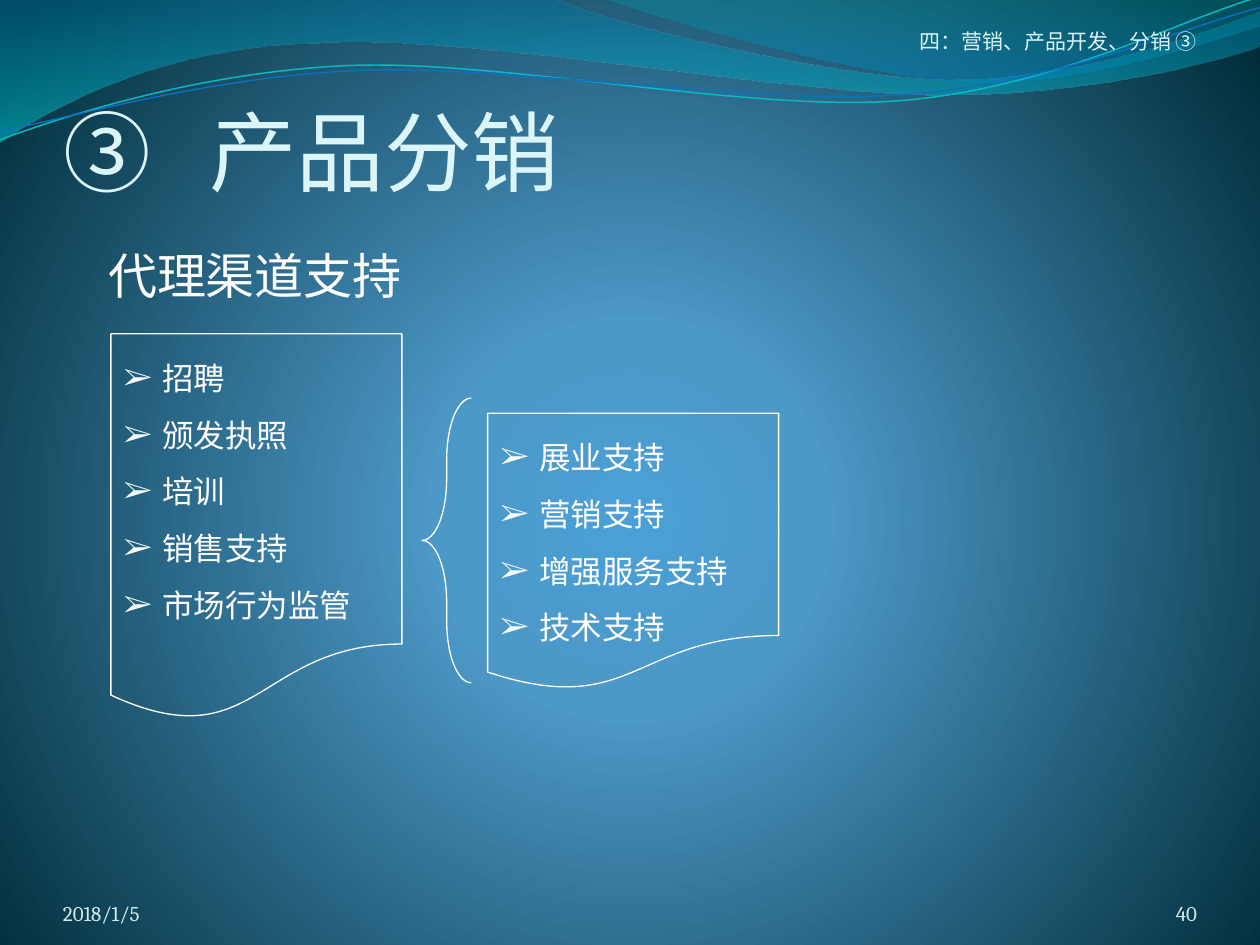
from math import cos, radians, sin
from pptx import Presentation
from pptx.dml.color import RGBColor
from pptx.enum.shapes import MSO_SHAPE as Preset
from pptx.enum.text import MSO_ANCHOR as Anchor, PP_ALIGN as Align
from pptx.oxml import parse_xml
from pptx.oxml.ns import qn
from pptx.util import Emu, Inches, Pt
from lxml.etree import SubElement

COLUMNS, ROWS = 100, 75
CELL = Inches(0.1)
TILT = 2.7
NAMESPACE = "http://schemas.openxmlformats.org/drawingml/2006/main"
COLOURS = {
    "white": "FFFFFF", "pale": "DBF5F9", "footer": "D1EAEE",
    "glow": "4AA0D6", "sky": "4C98C7", "night": "002C38",
    "blue": "0074A1", "cyan": "00C6CF", "teal": "00A1A9", "azure": "008BBF",
    "turquoise_line": "0AB8BF", "blue_line": "0F6FC6",
}
WIDE_WAVE = [
    [(0, 0)], [(44, -0.1)], [(47.6, 1.7), (66.4, 6.3), (75.8, 6.3)],
    [(85.3, 6.3), (95.8, 2.6), (100, 0.9)], [(100.1, 3.6)],
    [(98.3, 4.4), (87, 7.6), (74.6, 7.5)], [(62.2, 7.5), (38.2, 2.8), (25.7, 3.4)],
    [(12.9, 3.6), (4.6, 8.3), (-0.1, 11.3)], [(0, 0)],
]
CORNER_WAVE = [
    [(47.9, -0.1)], [(50.9, 1.1), (68.2, 6.2), (76.9, 6.5)],
    [(85.6, 6.9), (96.1, 3.2), (100, 2.1)], [(100, 0)], [(47.9, -0.1)],
]
UPPER_LINE = [
    [(0, 11.1)], [(4.8, 9.3), (15.8, 5.7), (27.7, 5.2)],
    [(39.5, 4.7), (59.3, 8.9), (71.3, 8)], [(83.3, 7.1), (93.8, 1.5), (99.8, -0.2)],
]
LOWER_LINE = [
    [(0, 10.4)], [(4.7, 9.6), (16.4, 6.1), (28.3, 5.6)],
    [(40.3, 5.1), (59.7, 8.4), (71.7, 7.5)], [(83.6, 6.7), (94.1, 2.1), (100, 0.6)],
]


def grid(*cells):
    """Turn grid columns and rows into lengths."""
    return [Emu(round(cell * CELL)) for cell in cells]


def rgb(name):
    """Look up a named colour."""
    return RGBColor.from_string(COLOURS[name])


def gradient(stops, direction):
    """Build a gradient fill from (position, colour, opacity) stops."""
    marks = "".join(
        f'<a:gs pos="{position * 1000}"><a:srgbClr val="{COLOURS[name]}">'
        f'<a:alpha val="{opacity * 1000}"/></a:srgbClr></a:gs>'
        for position, name, opacity in stops)
    return f'<a:gradFill xmlns:a="{NAMESPACE}" rotWithShape="1"><a:gsLst>{marks}</a:gsLst>{direction}</a:gradFill>'


def paint_background(slide):
    """Give the slide its round glow."""
    slide.background.fill.solid()
    properties = slide.background._cSld.bg.bgPr
    stops = [(0, "glow", 100), (25, "sky", 100), (100, "night", 100)]
    direction = '<a:path path="circle"><a:fillToRect l="10000" t="110000" r="10000" b="100000"/></a:path>'
    properties.replace(properties[0], parse_xml(gradient(stops, direction)))


def turn(point, pivot):
    """Turn a point clockwise about a pivot by the tilt."""
    angle = radians(TILT)
    across, down = point[0] - pivot[0], point[1] - pivot[1]
    return (pivot[0] + across * cos(angle) - down * sin(angle),
            pivot[1] + across * sin(angle) + down * cos(angle))


def add_curve(slide, segments, close):
    """Draw a freeform of straight and cubic segments without shadow, fill or line."""
    points = [tuple(grid(*point)) for segment in segments for point in segment]
    builder = slide.shapes.build_freeform(*points[0])
    builder.add_line_segments(points[1:], close=close)
    shape = builder.convert_to_shape()
    steps = iter(shape._element.findall(f".//{qn('a:lnTo')}"))
    for segment in segments[1:]:
        corners = [next(steps) for _ in segment]
        if len(corners) == 3:
            cubic = parse_xml(f'<a:cubicBezTo xmlns:a="{NAMESPACE}"/>')
            corners[0].addprevious(cubic)
            for corner in corners:
                cubic.append(corner[0])
                corner.getparent().remove(corner)
    shape.shadow.inherit = False
    shape.fill.background()
    shape.line.fill.background()
    return shape


def add_wave(slide, segments, stops):
    """Draw a translucent wave with a downward gradient."""
    properties = add_curve(slide, segments, True)._element.spPr
    fill = parse_xml(gradient(stops, '<a:lin ang="5400000" scaled="1"/>'))
    properties.replace(properties.find(qn("a:noFill")), fill)


def set_line(shape, colour, width):
    """Outline a shape."""
    shape.line.color.rgb = rgb(colour)
    shape.line.width = Pt(width)


def add_tilted_line(slide, segments, pivot, colour, width):
    """Draw an open curve as a level shape that is then tilted."""
    level = [[turn(point, pivot) for point in segment] for segment in segments]
    shape = add_curve(slide, level, False)
    shape.rotation = 360 - TILT
    set_line(shape, colour, width)


def add_run(paragraph, text, size, font, colour):
    """Add one formatted run."""
    run = paragraph.add_run()
    run.text = text
    run.font.size = Pt(size)
    run.font.name = font
    run.font.color.rgb = rgb(colour)


def add_label(slide, cells, text, size, font, colour, align=Align.LEFT, top_inset=0.0):
    """Add a one-paragraph text box standing on its lower edge."""
    frame = slide.shapes.add_textbox(*grid(*cells)).text_frame
    frame.word_wrap = True
    frame.vertical_anchor = Anchor.BOTTOM
    frame.margin_left = frame.margin_right = frame.margin_bottom = 0
    frame.margin_top = Inches(top_inset)
    paragraph = frame.paragraphs[0]
    paragraph.alignment = align
    add_run(paragraph, text, size, font, colour)
    return paragraph


def add_title(slide, number, text):
    """Add the title with its number set off by a tab stop."""
    paragraph = add_label(slide, (5, 6, 80.1, 10.1), f"{number}\t{text}", 50, "Calibri", "pale", top_inset=0.05)
    stops = SubElement(paragraph._p.get_or_add_pPr(), qn("a:tabLst"))
    SubElement(stops, qn("a:tab"), pos=str(Inches(1.16)), algn="l")


def add_subtitle(slide, text):
    """Add the heading above the lists."""
    frame = slide.shapes.add_textbox(*grid(7.6, 16.2, 33, 8.6)).text_frame
    frame.word_wrap = True
    paragraph = frame.paragraphs[0]
    paragraph.line_spacing = 1.6
    paragraph.space_before = Pt(5.6)
    add_run(paragraph, text, 28, "Times New Roman", "white")


def add_outline(slide, preset, cells):
    """Add an unfilled preset shape with a thin white line."""
    shape = slide.shapes.add_shape(preset, *grid(*cells))
    shape.shadow.inherit = False
    shape.fill.background()
    set_line(shape, "white", 0.75)
    return shape


def add_list(slide, cells, items):
    """Add a document shape holding a bulleted list."""
    frame = add_outline(slide, Preset.FLOWCHART_DOCUMENT, cells).text_frame
    frame.vertical_anchor = Anchor.TOP
    for index, item in enumerate(items):
        paragraph = frame.add_paragraph() if index else frame.paragraphs[0]
        paragraph.alignment = Align.LEFT
        paragraph.line_spacing = 1.5
        properties = paragraph._p.get_or_add_pPr()
        properties.set("marL", str(Inches(0.31)))
        properties.set("indent", str(-Inches(0.31)))
        SubElement(properties, qn("a:buFont"), typeface="Times New Roman")
        SubElement(properties, qn("a:buChar"), char="➢")
        add_run(paragraph, item, 18, "Times New Roman", "white")


def main():
    """Build and save the slide."""
    presentation = Presentation()
    presentation.slide_width, presentation.slide_height = grid(COLUMNS, ROWS)
    slide = presentation.slides.add_slide(presentation.slide_layouts[6])
    paint_background(slide)
    add_wave(slide, WIDE_WAVE, [(0, "blue", 45), (100, "cyan", 55)])
    add_wave(slide, CORNER_WAVE, [(0, "teal", 30), (80, "azure", 45)])
    add_tilted_line(slide, UPPER_LINE, (49.9, 5.75), "turquoise_line", 0.85)
    add_tilted_line(slide, LOWER_LINE, (49.95, 5.9), "blue_line", 0.75)
    add_label(slide, (5, 69.5, 23.3, 4), "2018/1/5", 12, "Cambria", "footer")
    add_label(slide, (86.7, 69.5, 8.3, 4), "40", 12, "Cambria", "footer", Align.RIGHT)
    add_label(slide, (63.4, 0, 31.6, 4.3), "四：营销、产品开发、分销 ③", 12, "Calibri", "pale", Align.RIGHT, 0.05)
    add_title(slide, "③", "产品分销")
    add_list(slide, (8.8, 26.5, 23.1, 30.7), ["招聘", "颁发执照", "培训", "销售支持", "市场行为监管"])
    add_subtitle(slide, "代理渠道支持")
    add_list(slide, (38.7, 32.8, 23.1, 22), ["展业支持", "营销支持", "增强服务支持", "技术支持"])
    brace = add_outline(slide, Preset.LEFT_BRACE, (33.5, 31.6, 3.9, 22.6))
    brace.adjustments[0] = 1.256
    presentation.save("out.pptx")


if __name__ == "__main__":
    main()
